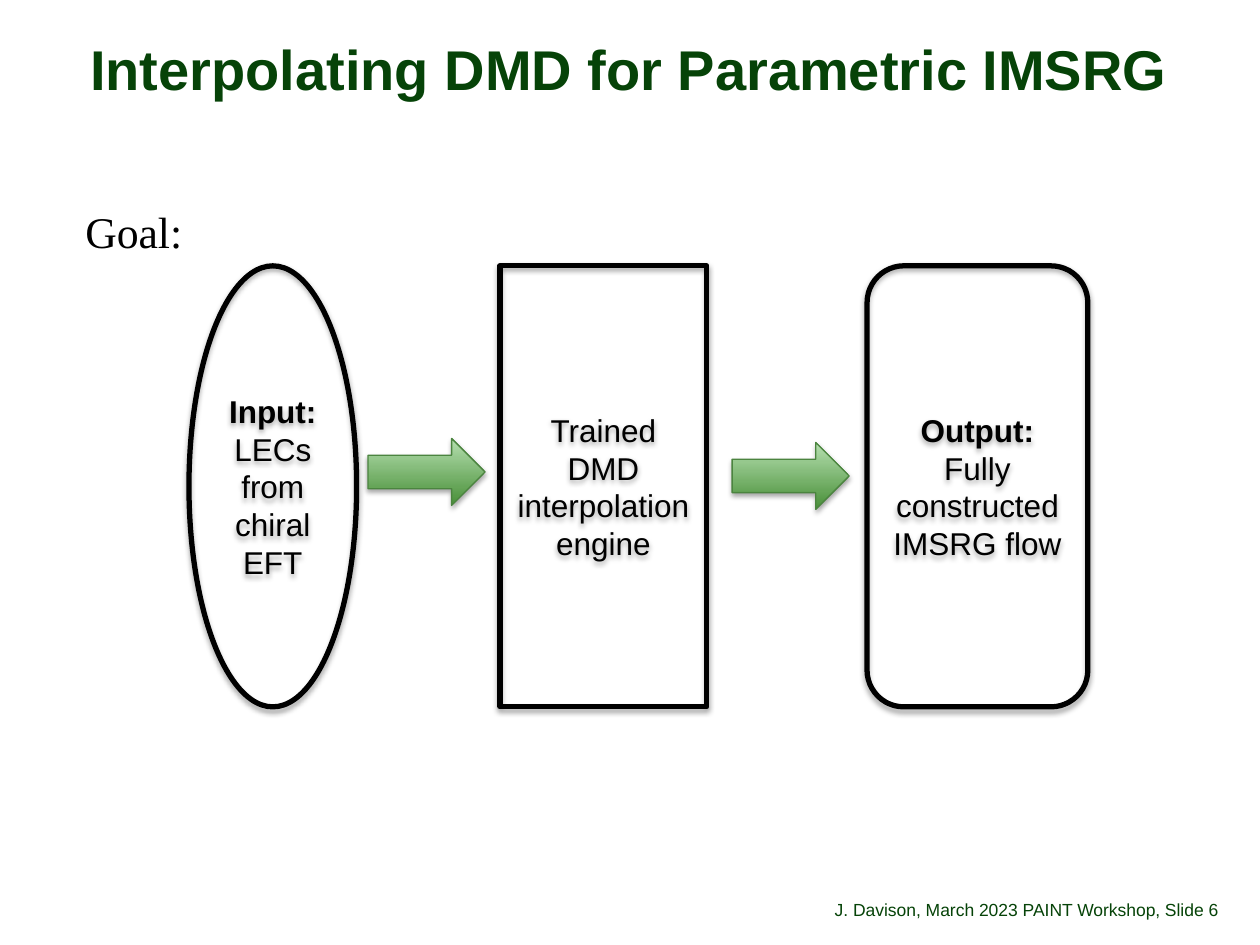
from dataclasses import dataclass

from lxml import etree
from pptx import Presentation
from pptx.dml.color import RGBColor
from pptx.enum.shapes import MSO_SHAPE
from pptx.enum.text import MSO_ANCHOR, PP_ALIGN
from pptx.oxml.ns import qn
from pptx.util import Cm, Pt

ELLIPSE, RECT = MSO_SHAPE.OVAL, MSO_SHAPE.RECTANGLE
ROUNDED, ARROW = MSO_SHAPE.ROUNDED_RECTANGLE, MSO_SHAPE.RIGHT_ARROW
TOP, MIDDLE, BOTTOM = MSO_ANCHOR.TOP, MSO_ANCHOR.MIDDLE, MSO_ANCHOR.BOTTOM
LEFT, CENTER, RIGHT = PP_ALIGN.LEFT, PP_ALIGN.CENTER, PP_ALIGN.RIGHT

COLORS = {
    "black": "000000",
    "title": "064308",
    "arrow_dark": "488F38",
    "arrow_light": "B5DFAF",
    "arrow_line": "4B843F",
}
STAGE_TOP, STAGE_HEIGHT = 5.36, 8.89
ARROW_WIDTH, ARROW_HEIGHT = 2.36, 1.35


@dataclass
class Stage:
    kind: MSO_SHAPE
    left: float
    width: float
    heading: str
    body: str


@dataclass
class Label:
    text: str
    left: float
    top: float
    width: float
    height: float
    size: float
    font: str
    color: str
    align: PP_ALIGN
    anchor: MSO_ANCHOR
    side_inset: float
    spacing: float


STAGES = [
    Stage(ELLIPSE, 3.81, 3.38, "Input: ", "LECs from chiral EFT"),
    Stage(RECT, 10.08, 4.17, "", "Trained DMD interpolation engine"),
    Stage(ROUNDED, 17.48, 4.45, "Output:", " Fully constructed IMSRG flow"),
]
ARROWS = [(7.42, 8.84), (14.76, 8.92)]
LABELS = [
    Label("J. Davison, March 2023 PAINT Workshop", 11.51, 17.65, 11.78, 1.02,
          10, "Arial", "title", RIGHT, BOTTOM, 0, 0.9),
    Label(", Slide 6", 23.29, 17.65, 2.11, 1.02,
          10, "Arial", "title", LEFT, BOTTOM, 0, 0.9),
    Label("Goal:", 1.47, 4.01, 2.57, 1.32,
          25, "Times New Roman", "black", LEFT, TOP, 0.25, 1.0),
]


def rgb(name: str) -> RGBColor:
    return RGBColor.from_string(COLORS[name])


def style_run(r, size: float, font: str, color: str, bold: bool = False) -> None:
    r.font.size, r.font.name, r.font.bold = Pt(size), font, bold
    r.font.color.rgb = rgb(color)


def add_shadow(sp) -> None:
    sp.shadow.inherit = False
    effects = sp._element.spPr.find(qn("a:effectLst"))
    shadow = etree.SubElement(effects, qn("a:outerShdw"), blurRad=str(Pt(3.1)),
                              dist=str(Pt(1.8)), dir="5400000", rotWithShape="0")
    color = etree.SubElement(shadow, qn("a:srgbClr"), val=COLORS["black"])
    etree.SubElement(color, qn("a:alpha"), val="35000")


def add_title(s, text: str) -> None:
    sp = s.shapes.title
    sp.left, sp.top, sp.width, sp.height = Cm(0.2), Cm(0.79), Cm(24.97), Cm(1.35)
    tf = sp.text_frame
    tf.text = text
    tf.vertical_anchor = MIDDLE
    tf.margin_left = tf.margin_right = Cm(0.15)
    tf.margin_top = tf.margin_bottom = Cm(0.05)
    p = tf.paragraphs[0]
    p.alignment, p.line_spacing = CENTER, 0.88
    style_run(p.runs[0], 32, "Arial", "title", True)


def add_label(s, label: Label) -> None:
    sp = s.shapes.add_textbox(Cm(label.left), Cm(label.top),
                              Cm(label.width), Cm(label.height))
    tf = sp.text_frame
    tf.text = label.text
    tf.word_wrap, tf.vertical_anchor = True, label.anchor
    tf.margin_left = tf.margin_right = Cm(label.side_inset)
    p = tf.paragraphs[0]
    p.alignment, p.line_spacing = label.align, label.spacing
    style_run(p.runs[0], label.size, label.font, label.color)


def add_stage(s, stage: Stage) -> None:
    sp = s.shapes.add_shape(stage.kind, Cm(stage.left), Cm(STAGE_TOP),
                            Cm(stage.width), Cm(STAGE_HEIGHT))
    sp.fill.background()
    sp.line.color.rgb, sp.line.width = rgb("black"), Pt(3)
    add_shadow(sp)
    tf = sp.text_frame
    tf.word_wrap, tf.vertical_anchor = True, MIDDLE
    p = tf.paragraphs[0]
    p.alignment = CENTER
    for text, bold in ((stage.heading, True), (stage.body, False)):
        if text:
            r = p.add_run()
            r.text = text
            style_run(r, 18, "Arial", "black", bold)


def add_arrow(s, left: float, top: float) -> None:
    sp = s.shapes.add_shape(ARROW, Cm(left), Cm(top),
                            Cm(ARROW_WIDTH), Cm(ARROW_HEIGHT))
    sp.fill.gradient()
    sp.fill.gradient_angle = 90
    for stop, name, position in zip(sp.fill.gradient_stops,
                                    ("arrow_dark", "arrow_light"), (0, 1)):
        stop.color.rgb, stop.position = rgb(name), position
    sp.line.color.rgb, sp.line.width = rgb("arrow_line"), Pt(0.75)
    add_shadow(sp)


def main() -> None:
    prs = Presentation()
    prs.slide_width, prs.slide_height = Cm(25.4), Cm(19.05)
    s = prs.slides.add_slide(prs.slide_layouts[5])

    # Title, goal and footer
    add_title(s, "Interpolating DMD for Parametric IMSRG")
    for label in LABELS:
        add_label(s, label)

    # Flow from input to output
    for stage in STAGES:
        add_stage(s, stage)
    for left, top in ARROWS:
        add_arrow(s, left, top)

    prs.save("out.pptx")


if __name__ == "__main__":
    main()
